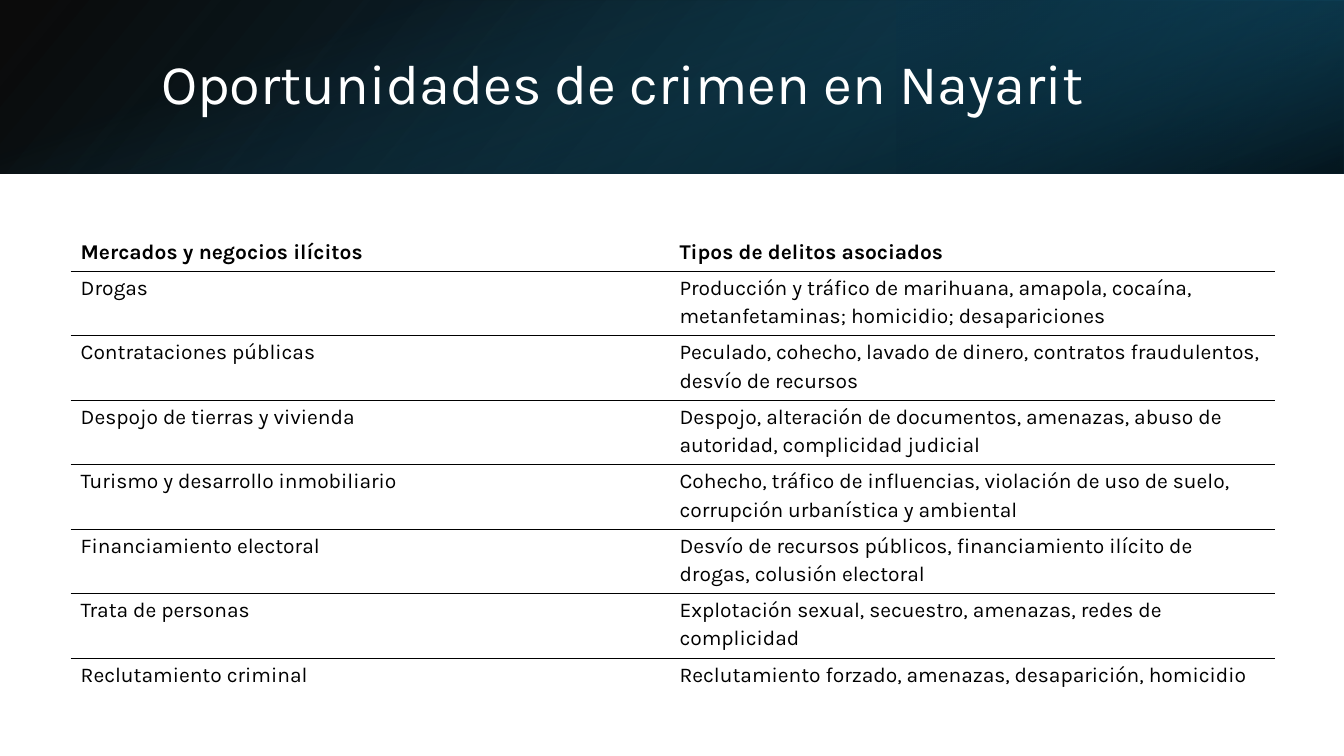
from dataclasses import dataclass

import pptx
import pptx.dml.color
import pptx.enum.shapes
import pptx.enum.text
import pptx.oxml
import pptx.oxml.ns
import pptx.util
from pptx.util import Inches

FONT = "Karla"
NO_GRID_STYLE = "{2D5ABB26-0587-4C30-8999-92F81FD0307C}"


@dataclass
class Stop:
    position: float
    color: str
    opacity: int  # percent


@dataclass
class Band:
    left: float
    top: float
    width: float
    height: float
    angle: int  # clockwise
    stops: tuple[Stop, Stop]
    rotation: int = 0
    flipped: bool = False


@dataclass
class Market:
    name: str
    crimes: str
    height: float = 0.64


BANDS = [
    Band(0, 0, 13.33, 1.72, 140,
         (Stop(0, "000000", 96), Stop(1, "104862", 100)), flipped=True),
    Band(8.89, 0, 4.44, 1.72, 320,
         (Stop(0.19, "0B3041", 68), Stop(1, "156082", 79)), 180, True),
    Band(5.8, -5.8, 1.72, 13.33, 340,
         (Stop(0.23, "156082", 0), Stop(0.99, "000000", 74)), 90),
]
# The first row is the header
MARKETS = [
    Market("Mercados y negocios ilícitos", "Tipos de delitos asociados", 0.35),
    Market("Drogas", "Producción y tráfico de marihuana, amapola, cocaína, "
           "metanfetaminas; homicidio; desapariciones"),
    Market("Contrataciones públicas", "Peculado, cohecho, lavado de dinero, "
           "contratos fraudulentos, desvío de recursos"),
    Market("Despojo de tierras y vivienda", "Despojo, alteración de documentos, "
           "amenazas, abuso de autoridad, complicidad judicial"),
    Market("Turismo y desarrollo inmobiliario", "Cohecho, tráfico de influencias, "
           "violación de uso de suelo, corrupción urbanística y ambiental"),
    Market("Financiamiento electoral", "Desvío de recursos públicos, "
           "financiamiento ilícito de drogas, colusión electoral"),
    Market("Trata de personas",
           "Explotación sexual, secuestro, amenazas, redes de complicidad"),
    Market("Reclutamiento criminal",
           "Reclutamiento forzado, amenazas, desaparición, homicidio", 0.35),
]
COLUMN_WIDTHS = (5.94, 6.01)


def rgb(color: str) -> pptx.dml.color.RGBColor:
    return pptx.dml.color.RGBColor.from_string(color)


def style_text(paragraph, size: float, color: str, spacing: float, bold: bool = False) -> None:
    paragraph.line_spacing = spacing
    paragraph.font.name = FONT
    paragraph.font.size = pptx.util.Pt(size)
    paragraph.font.color.rgb = rgb(color)
    paragraph.font.bold = bold


def draw_band(slide, band: Band) -> None:
    banner = slide.shapes.add_shape(
        pptx.enum.shapes.MSO_SHAPE.RECTANGLE, Inches(band.left), Inches(band.top),
        Inches(band.width), Inches(band.height))
    banner.shadow.inherit = False
    banner.line.fill.background()
    banner.rotation = band.rotation
    if band.flipped:
        banner.element.spPr.xfrm.set("flipH", "1")
    banner.fill.gradient()
    banner.fill.gradient_angle = 360 - band.angle
    for gradient_stop, stop in zip(banner.fill.gradient_stops, band.stops):
        gradient_stop.position = stop.position
        gradient_stop.color.rgb = rgb(stop.color)
    # Opacity of each stop
    colors = banner.element.spPr.findall(".//" + pptx.oxml.ns.qn("a:gs"))
    for color_stop, stop in zip(colors, band.stops):
        color_stop[0].append(pptx.oxml.parse_xml(
            f'<a:alpha {pptx.oxml.ns.nsdecls("a")} val="{stop.opacity * 1000}"/>'))


def draw_title(slide, text: str) -> None:
    title = slide.shapes.add_textbox(Inches(1.5), Inches(0.38), Inches(10.98), Inches(0.96))
    title.text_frame.word_wrap = True
    title.text_frame.vertical_anchor = pptx.enum.text.MSO_ANCHOR.MIDDLE
    title.text_frame.text = text
    style_text(title.text_frame.paragraphs[0], 40, "FFFFFF", 0.9)


def rule_cell(cell, side: str, color: str = "000000") -> None:
    """Draw a 1 pt line on one side of a cell ("T" or "B")."""
    cell._tc.get_or_add_tcPr().append(pptx.oxml.parse_xml(
        f'<a:ln{side} {pptx.oxml.ns.nsdecls("a")} w="12700"><a:solidFill>'
        f'<a:srgbClr val="{color}"/></a:solidFill></a:ln{side}>'))


def draw_markets(slide, markets: list[Market]) -> None:
    frame = slide.shapes.add_table(
        len(markets), len(COLUMN_WIDTHS), Inches(0.7), Inches(2.34),
        Inches(sum(COLUMN_WIDTHS)), Inches(sum(market.height for market in markets)))
    table = frame.table
    table.horz_banding = False
    table._tbl.tblPr.find(pptx.oxml.ns.qn("a:tableStyleId")).text = NO_GRID_STYLE
    for column, width in zip(table.columns, COLUMN_WIDTHS):
        column.width = Inches(width)
    for index, market in enumerate(markets):
        table.rows[index].height = Inches(market.height)
        for cell, text in zip(table.rows[index].cells, (market.name, market.crimes)):
            cell.text = text
            cell.margin_left = cell.margin_right = Inches(0.1)
            cell.margin_top, cell.margin_bottom = Inches(0.01), 0
            paragraph = cell.text_frame.paragraphs[0]
            paragraph.space_after = pptx.util.Pt(10)
            style_text(paragraph, 15, "000000", 1.15, bold=index == 0)
            # Lines between rows only
            if index > 0:
                rule_cell(cell, "T")
            if index < len(markets) - 1:
                rule_cell(cell, "B")
            cell.fill.background()


def main() -> None:
    presentation = pptx.Presentation()
    presentation.slide_width, presentation.slide_height = Inches(13.33), Inches(7.5)
    slide = presentation.slides.add_slide(presentation.slide_layouts[6])
    for band in BANDS:
        draw_band(slide, band)
    draw_title(slide, "Oportunidades de crimen en Nayarit")
    draw_markets(slide, MARKETS)
    presentation.save("out.pptx")


if __name__ == "__main__":
    main()
